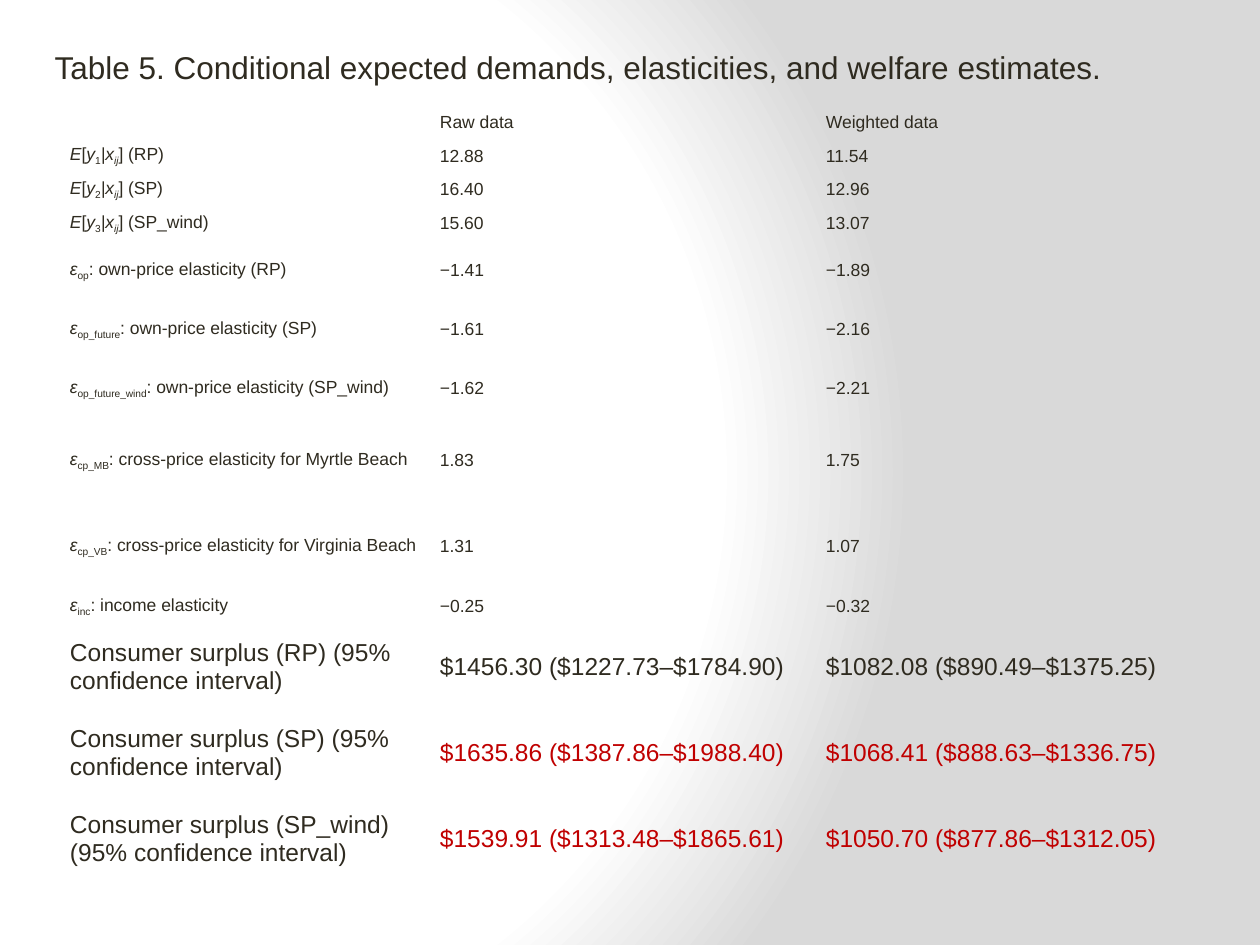
import lxml.etree
import pptx
import pptx.dml.color
import pptx.enum.text
import pptx.oxml
import pptx.oxml.ns
import pptx.util

EMU_PER_PX = 914400 / 126
COLORS = {"text": "2F2B20", "highlight": "C00000", "light": "FFFFFF", "shade": "D9D9D9"}
NO_STYLE_NO_GRID = "{2D5ABB26-0587-4C30-8999-92F81FD0307C}"
qn = pptx.oxml.ns.qn


def px(length):
    return pptx.util.Emu(round(length * EMU_PER_PX))


class Deck:
    font = "Arial"

    def __init__(self, width, height):
        self.presentation = pptx.Presentation()
        self.presentation.slide_width = px(width)
        self.presentation.slide_height = px(height)

    def add_slide(self):
        self.slide = self.presentation.slides.add_slide(self.presentation.slide_layouts[5])

    def radial_background(self, stops, center):
        """Shade in circles around center, given in percent of the slide size."""
        fill = self.slide.background.fill
        fill.gradient()
        gradient = next(self.slide._element.iter(qn("a:gradFill")))
        for child in list(gradient):
            gradient.remove(child)
        stop_list = lxml.etree.SubElement(gradient, qn("a:gsLst"))
        for percent, color in stops:
            stop = lxml.etree.SubElement(stop_list, qn("a:gs"), pos=str(percent * 1000))
            lxml.etree.SubElement(stop, qn("a:srgbClr"), val=COLORS[color])
        circle = lxml.etree.SubElement(gradient, qn("a:path"), {"path": "circle"})
        x, y = center
        sides = {"l": x, "t": y, "r": 100 - x, "b": 100 - y}
        lxml.etree.SubElement(circle, qn("a:fillToRect"),
                              {side: str(value * 1000) for side, value in sides.items()})

    def add_runs(self, paragraph, runs, size, color="text"):
        """Add (text, marks) runs; marks hold i for italic and s for subscript."""
        paragraph.alignment = pptx.enum.text.PP_ALIGN.LEFT
        for text, marks in runs:
            run = paragraph.add_run()
            run.text = text
            run.font.name = self.font
            run.font.size = pptx.util.Pt(size)
            run.font.italic = "i" in marks
            run.font.color.rgb = pptx.dml.color.RGBColor.from_string(COLORS[color])
            if "s" in marks:
                run.font._element.set("baseline", "-25000")
        if not runs:
            lxml.etree.SubElement(paragraph._p, qn("a:endParaRPr"), sz=str(size * 100))

    def title(self, text, left, top, width, height, size):
        title = self.slide.shapes.title
        title.left, title.top, title.width, title.height = map(px, (left, top, width, height))
        frame = title.text_frame
        frame.word_wrap = True
        frame.auto_size = pptx.enum.text.MSO_AUTO_SIZE.SHAPE_TO_FIT_TEXT
        frame.vertical_anchor = pptx.enum.text.MSO_ANCHOR.TOP
        self.add_runs(frame.paragraphs[0], [(text, "")], size)

    def table(self, left, top, widths, rows):
        """Draw rows of (height, size, value color, label runs, values)."""
        heights = [row[0] for row in rows]
        frame = self.slide.shapes.add_table(len(rows), len(widths), px(left), px(top),
                                            px(sum(widths)), px(sum(heights)))
        table = frame.table
        table.first_row = table.horz_banding = False
        next(table._tbl.iter(qn("a:tableStyleId"))).text = NO_STYLE_NO_GRID
        for column, width in zip(table.columns, widths):
            column.width = px(width)
        for table_row, (height, size, color, label, values) in zip(table.rows, rows):
            table_row.height = px(height)
            contents = [(label, "text")] + [([(value, "")], color) for value in values]
            for cell, (runs, cell_color) in zip(table_row.cells, contents):
                cell.fill.background()
                cell.vertical_anchor = pptx.enum.text.MSO_ANCHOR.MIDDLE
                cell.margin_left = cell.margin_right = px(7)
                cell.margin_top = cell.margin_bottom = px(4)
                self.add_runs(cell.text_frame.paragraphs[0], runs, size, cell_color)

    def save(self):
        self.presentation.save("out.pptx")


def demand(number, scenario):
    return [("E", "i"), ("[", ""), ("y", "i"), (number, "s"), ("|x", "i"),
            ("ij", "is"), (f"] ({scenario})", "")]


def elasticity(subscript, meaning):
    return [("ɛ", "i"), (subscript, "s"), (f": {meaning}", "")]


def surplus(scenario):
    return [(f"Consumer surplus ({scenario}) (95% confidence interval)", "")]


def main():
    low, middle, tall = 34, 59, 86
    small, large = 10, 14
    demands = [
        ("1", "RP", "12.88", "11.54"),
        ("2", "SP", "16.40", "12.96"),
        ("3", "SP_wind", "15.60", "13.07"),
    ]
    elasticities = [
        (middle, "op", "own-price elasticity (RP)", "−1.41", "−1.89"),
        (middle, "op_future", "own-price elasticity (SP)", "−1.61", "−2.16"),
        (middle, "op_future_wind", "own-price elasticity (SP_wind)", "−1.62", "−2.21"),
        (tall, "cp_MB", "cross-price elasticity for Myrtle Beach", "1.83", "1.75"),
        (tall, "cp_VB", "cross-price elasticity for Virginia Beach", "1.31", "1.07"),
        (low, "inc", "income elasticity", "−0.25", "−0.32"),
    ]
    surpluses = [
        ("text", "RP", "$1456.30 ($1227.73–$1784.90)", "$1082.08 ($890.49–$1375.25)"),
        ("highlight", "SP", "$1635.86 ($1387.86–$1988.40)", "$1068.41 ($888.63–$1336.75)"),
        ("highlight", "SP_wind", "$1539.91 ($1313.48–$1865.61)", "$1050.70 ($877.86–$1312.05)"),
    ]
    rows = [(low, small, "text", [], ["Raw data", "Weighted data"])]
    rows += [(low, small, "text", demand(number, scenario), values)
             for number, scenario, *values in demands]
    rows += [(height, small, "text", elasticity(subscript, meaning), values)
             for height, subscript, meaning, *values in elasticities]
    rows += [(tall, large, color, surplus(scenario), values)
             for color, scenario, *values in surpluses]

    deck = Deck(1260, 945)
    deck.add_slide()
    deck.radial_background([(0, "light"), (75, "light"), (100, "shade")], center=(10, 50))
    deck.title("Table 5. Conditional expected demands, elasticities, and welfare estimates.",
               42, 42, 1144, 50, size=18)
    deck.table(63, 105, [370, 386, 357], rows)
    deck.save()


if __name__ == "__main__":
    main()
